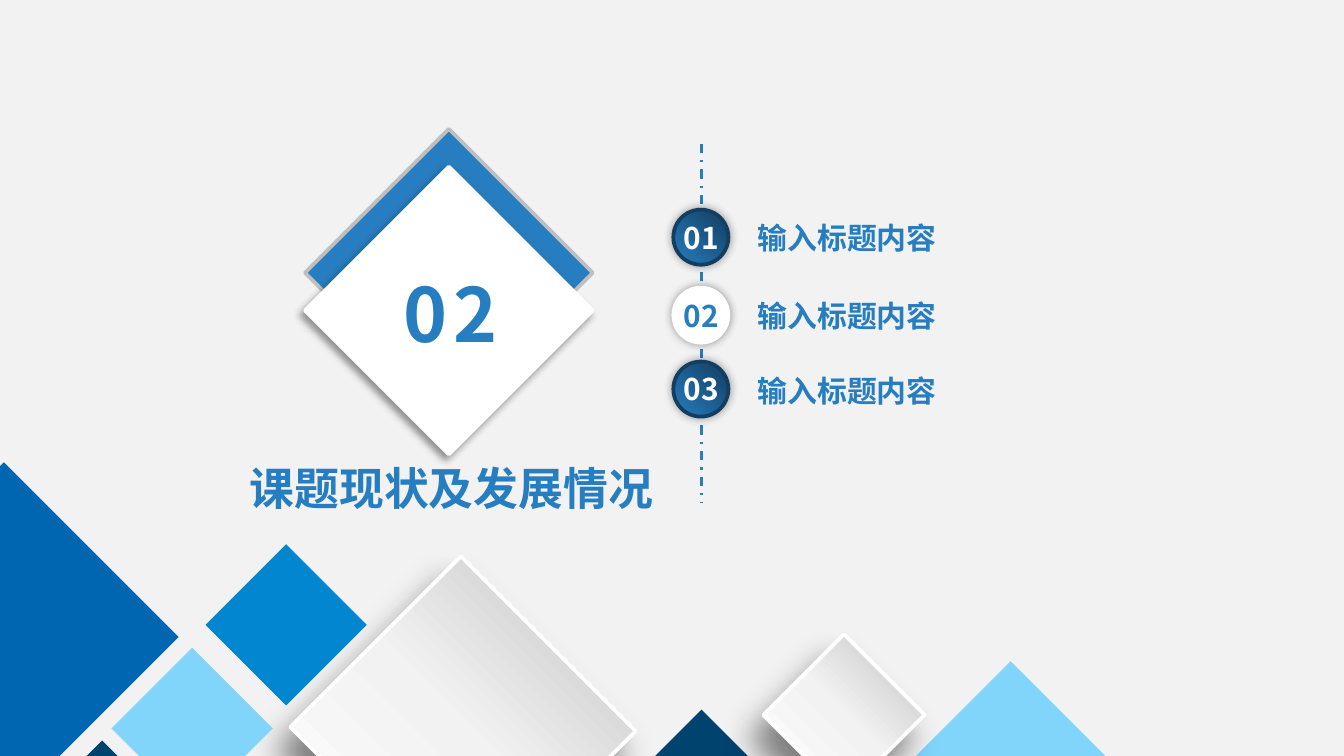
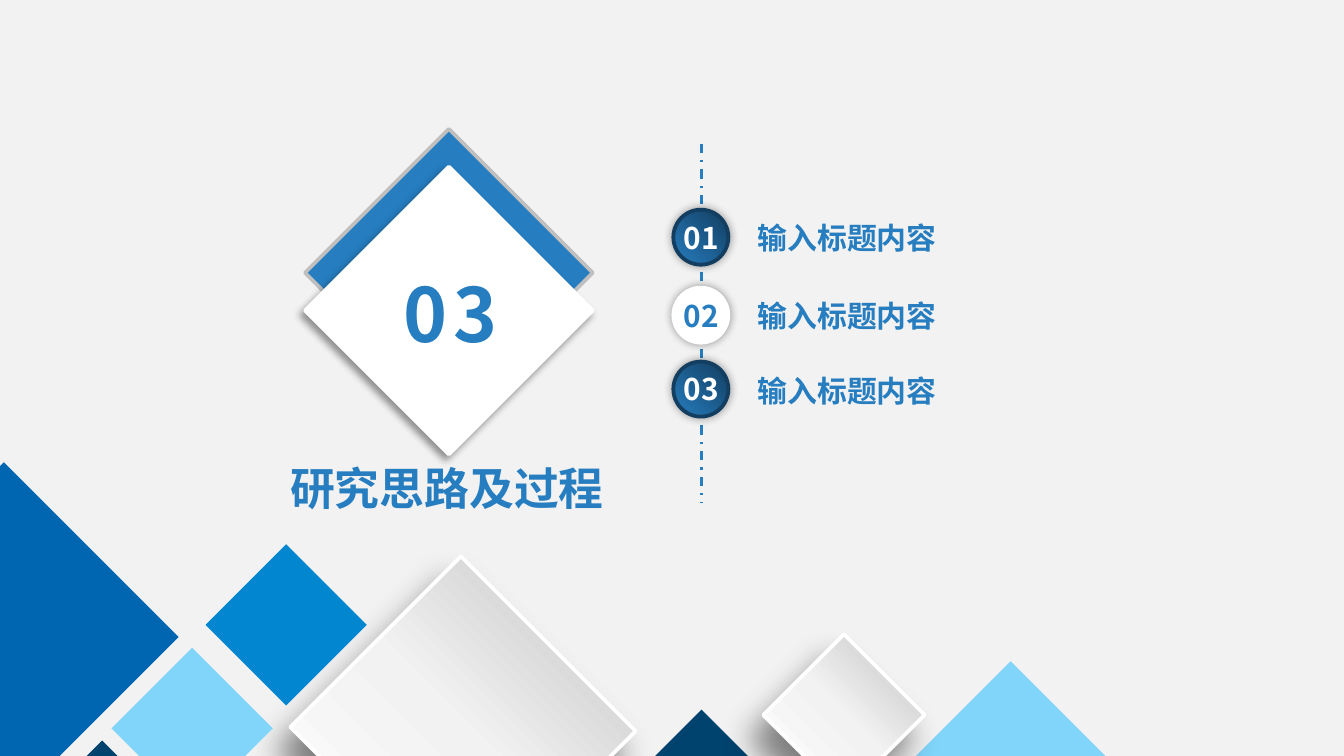
from lxml.etree import SubElement
from pptx import Presentation
from pptx.dml.color import RGBColor
from pptx.enum.dml import MSO_LINE_DASH_STYLE as DASH
from pptx.enum.shapes import MSO_CONNECTOR as CONNECTOR, MSO_SHAPE as SHAPE
from pptx.enum.text import MSO_ANCHOR as ANCHOR, PP_ALIGN as ALIGN
from pptx.oxml.ns import qn
from pptx.util import Inches, Pt

# Palette and type
FONT = "Noto Sans CJK SC"
BLUE, WHITE, PALE, NAVY = "267DBF", "FFFFFF", "F2F2F2", "133E60"
SILVER, SKY, INK = "BFBFBF", "81D5FA", "00436F"
BUTTON_FADE = ([(0, BLUE), (100, NAVY)], 315)
SILVER_FADE = ([(0, SILVER), (50, PALE), (100, WHITE)], 135)
hex_color = RGBColor.from_string

# Shadows: colour, opacity %, blur pt, distance pt, angle
CARD_SHADOW = ("000000", 40, 4, 3, 135)
BUTTON_SHADOW = ("000000", 40, 5, 0, 0)
TILE_SHADOW = ("0D0D0D", 50, 17, 14, 120)

# Square grid, 100 columns across the slide
prs = Presentation()
prs.slide_width, prs.slide_height = Inches(10), Inches(5.625)
CELL = prs.slide_width / 100

# Contents: chapter number, title, title column, title width
CHAPTERS = [
    ("02", "课题现状及发展情况", 17.6, 32.3),
    ("03", "研究思路及过程", 20.6, 25.6),
]
# Topics: button row, label row, text, button fill, edge, number colour
TOPICS = [
    (15.6, 15.8, "输入标题内容", BUTTON_FADE, NAVY, WHITE),
    (21.4, 21.6, "输入标题内容", WHITE, WHITE, BLUE),
    (26.9, 27.2, "输入标题内容", BUTTON_FADE, NAVY, WHITE),
]
# Footer tiles: column, row, size, offset of the top corner, fill
TILES = [
    (1.6, 55.1, 12, 6, INK),
    (-12.4, 34.4, 25.7, 12.7, "0066B2"),
    (21.6, 41.4, 25.7, 12.7, SILVER_FADE),
    (8.3, 48.2, 12, 6, SKY),
    (46.2, 52.8, 12, 6, INK),
    (15.3, 40.5, 12, 6, "0286D0"),
    (65.7, 49.2, 19, 9.5, SKY),
    (56.8, 47.2, 12, 6, SILVER_FADE),
]


def paint(shape, fill, edge=None, shadow=None):
    if isinstance(fill, str):
        shape.fill.solid()
        shape.fill.fore_color.rgb = hex_color(fill)
    else:
        stops, angle = fill
        shape.fill.gradient()
        gradient = shape._element.spPr.find(qn("a:gradFill"))
        stop_list = gradient.find(qn("a:gsLst"))
        stop_list.clear()
        for position, color in stops:
            stop = SubElement(stop_list, qn("a:gs"), pos=str(position * 1000))
            SubElement(stop, qn("a:srgbClr"), val=color)
        gradient.find(qn("a:lin")).set("ang", str(angle * 60000))
    if edge:
        shape.line.color.rgb = hex_color(edge)
        shape.line.width = Pt(2)
    else:
        shape.line.fill.background()
    shape.shadow.inherit = False
    if shadow:
        color, opacity, blur, distance, angle = shadow
        effects = shape._element.spPr.find(qn("a:effectLst"))
        outer = SubElement(effects, qn("a:outerShdw"), blurRad=str(Pt(blur)),
                           dist=str(Pt(distance)), dir=str(angle * 60000),
                           algn="ctr", rotWithShape="0")
        tint = SubElement(outer, qn("a:srgbClr"), val=color)
        SubElement(tint, qn("a:alpha"), val=str(opacity * 1000))


def write(shapes, text, box, size, color=BLUE, wrap=True, align=ALIGN.LEFT, spacing=0):
    frame = shapes.add_textbox(*[round(n * CELL) for n in box]).text_frame
    frame.word_wrap = wrap
    frame.vertical_anchor = ANCHOR.MIDDLE
    paragraph = frame.paragraphs[0]
    paragraph.text = text
    paragraph.alignment = align
    font = paragraph.font
    font.name, font.size, font.bold = FONT, Pt(size), True
    font.color.rgb = hex_color(color)
    defaults = paragraph._p.pPr.find(qn("a:defRPr"))
    SubElement(defaults, qn("a:ea"), typeface=FONT)
    if spacing:
        defaults.set("spc", str(spacing * 100))


# Shared background
backdrop = prs.slide_master.background.fill
backdrop.solid()
backdrop.fore_color.rgb = hex_color(PALE)

for number, title, title_col, title_width in CHAPTERS:
    shapes = prs.slides.add_slide(prs.slide_layouts[6]).shapes

    # Chapter number on two stacked diamonds
    side = round(21.4 * CELL)
    badge_left = round(22.7 * CELL)
    back = shapes.add_shape(SHAPE.DIAMOND, badge_left, round(9.6 * CELL), side, side)
    paint(back, BLUE, SILVER)
    badge = shapes.add_group_shape().shapes
    card = badge.add_shape(SHAPE.DIAMOND, badge_left, round(12.4 * CELL), side, side)
    paint(card, WHITE, WHITE, CARD_SHADOW)
    write(badge, number, (19.8, 19.4, 18.2, 7.7), 40, align=ALIGN.RIGHT, spacing=3)

    # Dashed timeline
    axis = round(52.2 * CELL)
    timeline = shapes.add_connector(CONNECTOR.STRAIGHT, axis, round(10.7 * CELL),
                                    axis, round(37.4 * CELL))
    timeline.line.color.rgb = hex_color(BLUE)
    timeline.line.width = Pt(1.25)
    timeline.line.dash_style = DASH.DASH_DOT
    SubElement(timeline._element.spPr, qn("a:effectLst"))

    # Chapter title
    write(shapes, title, (title_col, 33.8, title_width, 5), 24, wrap=False)

    # Numbered buttons, then their labels
    for index, (row, _, _, fill, edge, digit_color) in enumerate(TOPICS, 1):
        button = shapes.add_group_shape().shapes
        diameter = round(4.1 * CELL)
        disc = button.add_shape(SHAPE.OVAL, round(50.1 * CELL), round(row * CELL),
                                diameter, diameter)
        paint(disc, fill, edge, BUTTON_SHADOW)
        write(button, f"{index:02}", (49.9, row + 0.2, 5.2, 3.7), 16, digit_color)
    for _, row, topic, *_ in TOPICS:
        write(shapes, topic, (55.4, row, 18.2, 3.7), 16)

    # Footer tiles
    for col, row, size, near, fill in TILES:
        far = size - near
        corners = [(round((col + x) * CELL), round((row + y) * CELL))
                   for x, y in [(size, far), (near, 0), (0, near), (far, size)]]
        outline = shapes.build_freeform(*corners[0])
        outline.add_line_segments(corners[1:], close=True)
        tile = outline.convert_to_shape()
        if fill is SILVER_FADE:
            paint(tile, fill, WHITE, TILE_SHADOW)
        else:
            paint(tile, fill)

prs.save("out.pptx")
